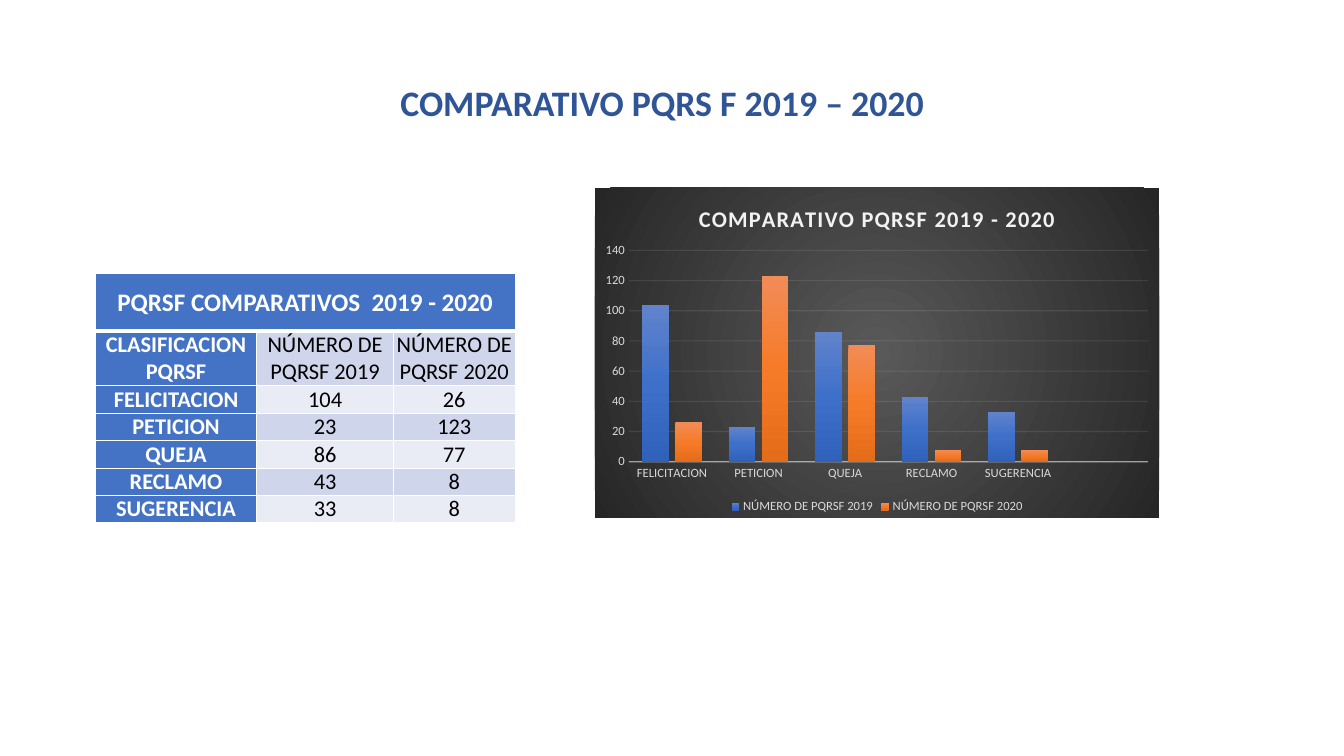
from lxml.etree import SubElement
from pptx import Presentation
from pptx.chart.data import CategoryChartData
from pptx.dml.color import RGBColor
from pptx.enum.chart import XL_CHART_TYPE, XL_LEGEND_POSITION, XL_TICK_MARK
from pptx.enum.text import MSO_ANCHOR, MSO_AUTO_SIZE, PP_ALIGN
from pptx.oxml import parse_xml
from pptx.oxml.ns import nsdecls, qn
from pptx.util import Pt

NAVY = RGBColor(0x2F, 0x55, 0x97)
BLUE = RGBColor(0x44, 0x72, 0xC4)
BAND = RGBColor(0xCF, 0xD5, 0xEA)
PALE = RGBColor(0xE9, 0xEB, 0xF5)
WHITE = RGBColor(0xFF, 0xFF, 0xFF)
BLACK = RGBColor(0, 0, 0)
LIGHT = RGBColor(0xF2, 0xF2, 0xF2)
GREY = RGBColor(0xD9, 0xD9, 0xD9)
LINEAR = '<a:lin ang="5400000" scaled="0"/>'
RADIAL = ('<a:path path="circle"><a:fillToRect l="50000" t="50000" '
          'r="50000" b="50000"/></a:path>')
BACK = [(0, RGBColor(0x59, 0x59, 0x59)), (100, RGBColor(0x26, 0x26, 0x26))]
BARS = [
    [(0, RGBColor(0x61, 0x83, 0xCB)), (50, RGBColor(0x3E, 0x70, 0xCA)),
     (100, RGBColor(0x30, 0x62, 0xBB))],
    [(0, RGBColor(0xF1, 0x8C, 0x57)), (50, RGBColor(0xF6, 0x7B, 0x28)),
     (100, RGBColor(0xE5, 0x6C, 0x19))],
]

NAMES = ["NÚMERO DE PQRSF 2019", "NÚMERO DE PQRSF 2020"]
COUNTS = [("FELICITACION", 104, 26), ("PETICION", 23, 123), ("QUEJA", 86, 77),
          ("RECLAMO", 43, 8), ("SUGERENCIA", 33, 8)]


def shade(stops, kind):
    """Return a gradient fill element; kind is LINEAR or RADIAL."""
    marks = "".join(f'<a:gs pos="{pos * 1000}"><a:srgbClr val="{tint}"/></a:gs>'
                    for pos, tint in stops)
    return parse_xml(f'<a:gradFill {nsdecls("a")} rotWithShape="1">'
                     f'<a:gsLst>{marks}</a:gsLst>{kind}</a:gradFill>')


def fade(node, where, percent):
    """Make the colours found at the given place partly transparent."""
    for tint in node.xpath(where + "//a:srgbClr"):
        SubElement(tint, qn("a:alpha")).set("val", str(percent * 1000))


class Page:
    def __init__(self, deck, face):
        self.face = face
        self.slide = deck.slides.add_slide(deck.slide_layouts[5])

    def style(self, font, tint, **values):
        for key, value in {"name": self.face, **values}.items():
            setattr(font, key, value)
        font.color.rgb = tint

    def title(self, text, box):
        shape = self.slide.shapes.title
        for key, value in zip(("left", "top", "width", "height"), box):
            setattr(shape, key, Pt(value))
        frame = shape.text_frame
        values = {"auto_size": MSO_AUTO_SIZE.NONE, "word_wrap": True,
                  "margin_top": 0, "vertical_anchor": MSO_ANCHOR.TOP}
        for key, value in values.items():
            setattr(frame, key, value)
        frame.text = text
        para = frame.paragraphs[0]
        para.alignment = PP_ALIGN.CENTER
        para.line_spacing = 0.7
        self.style(para.font, NAVY, size=Pt(25.6), bold=True)

    def cell(self, cell, text, fill, tint, size, edges):
        """Fill a table cell; edges are the left, right, top, bottom widths."""
        props = cell._tc.get_or_add_tcPr()
        for side, width in zip("LRTB", edges):
            props.append(parse_xml(
                f'<a:ln{side} {nsdecls("a")} w="{Pt(width)}"><a:solidFill>'
                f'<a:srgbClr val="{WHITE}"/></a:solidFill></a:ln{side}>'))
        cell.fill.solid()
        cell.fill.fore_color.rgb = fill
        for side in ("left", "right", "top", "bottom"):
            setattr(cell, "margin_" + side, 0)
        cell.vertical_anchor = MSO_ANCHOR.MIDDLE
        cell.text = text
        para = cell.text_frame.paragraphs[0]
        para.alignment = PP_ALIGN.CENTER
        self.style(para.font, tint, size=Pt(size), bold=tint == WHITE)

    def table(self, rows, box, widths, heights):
        table = self.slide.shapes.add_table(
            len(rows), len(widths), *map(Pt, box)).table
        for col, width in zip(table.columns, widths):
            col.width = Pt(width)
        for row, height in zip(table.rows, heights):
            row.height = Pt(height)
        for r, row in enumerate(rows):
            edges = (1, 1, 3 if r == 1 else 1, 3 if r == 0 else 1)
            for c, text in enumerate(row):
                head = r == 0 or c == 0
                fill = BLUE if head else (BAND if r % 2 else PALE)
                self.cell(table.cell(r, c), str(text), fill,
                          WHITE if head else BLACK, 16 if r else 18, edges)
        table.cell(0, 0).merge(table.cell(0, len(widths) - 1))

    def axis(self, axis):
        axis.major_tick_mark = axis.minor_tick_mark = XL_TICK_MARK.NONE
        self.style(axis.tick_labels.font, GREY, size=Pt(9))

    def chart(self, title, box):
        data = CategoryChartData()
        data.categories = [row[0] for row in COUNTS] + [""]
        for col, name in enumerate(NAMES, 1):
            data.add_series(name, [row[col] for row in COUNTS] + [None])
        chart = self.slide.shapes.add_chart(
            XL_CHART_TYPE.COLUMN_CLUSTERED, *map(Pt, box), data).chart
        self.style(chart.font, BLACK, size=Pt(10))
        space = chart._chartSpace
        back = parse_xml(f'<c:spPr {nsdecls("c", "a")}>'
                         '<a:ln><a:noFill/></a:ln></c:spPr>')
        back.insert(0, shade(BACK, RADIAL))
        space.find(qn("c:txPr")).addprevious(back)

        chart.has_title = True
        frame = chart.chart_title.text_frame
        frame.text = title
        font = frame.paragraphs[0].runs[0].font
        self.style(font, LIGHT, size=Pt(16), bold=True)
        font._element.set("spc", "100")
        chart.chart_title.include_in_layout = False

        chart.has_legend = True
        chart.legend.position = XL_LEGEND_POSITION.BOTTOM
        chart.legend.include_in_layout = False
        self.style(chart.legend.font, GREY, size=Pt(9))

        plot = chart.plots[0]
        for key, value in {"gap_width": 100, "overlap": -24,
                           "vary_by_categories": False}.items():
            setattr(plot, key, value)
        for series, stops in zip(plot.series, BARS):
            series.invert_if_negative = False
            series._element.get_or_add_spPr().append(shade(stops, LINEAR))

        base, scale = chart.category_axis, chart.value_axis
        self.axis(base)
        base.format.line.width = Pt(1)
        base.format.line.color.rgb = LIGHT
        fade(base._element, "c:spPr", 54)
        self.axis(scale)
        for key, value in {"minimum_scale": 0, "maximum_scale": 140,
                           "major_unit": 20}.items():
            setattr(scale, key, value)
        scale.format.line.fill.background()
        grid = scale.major_gridlines.format.line
        grid.width = Pt(0.75)
        grid.color.rgb = LIGHT
        fade(scale._element, "c:majorGridlines", 10)

        area = space.xpath("c:chart/c:plotArea")[0]
        for old in area.findall(qn("c:layout")):
            area.remove(old)
        place = {"layoutTarget": "inner", "xMode": "edge", "yMode": "edge",
                 "x": 0.06, "y": 0.19, "w": 0.92, "h": 0.64}
        bits = "".join(f'<c:{key} val="{val}"/>' for key, val in place.items())
        area.insert(0, parse_xml(
            f'<c:layout {nsdecls("c")}><c:manualLayout>{bits}'
            '</c:manualLayout></c:layout>'))


def main():
    deck = Presentation()
    deck.slide_width, deck.slide_height = Pt(960), Pt(540)
    page = Page(deck, "Calibri")
    rows = [("PQRSF COMPARATIVOS  2019 - 2020", "", ""),
            ("CLASIFICACION PQRSF", *NAMES), *COUNTS]
    page.table(rows, (68, 195.5, 300, 175), (115.5, 97.5, 87),
               [41, 38] + [19.2] * len(COUNTS))
    page.chart("COMPARATIVO PQRSF 2019 - 2020", (425, 134, 403, 236))
    page.title("COMPARATIVO PQRS F 2019 – 2020", (113, 66, 720, 68))
    deck.save("out.pptx")


if __name__ == "__main__":
    main()
